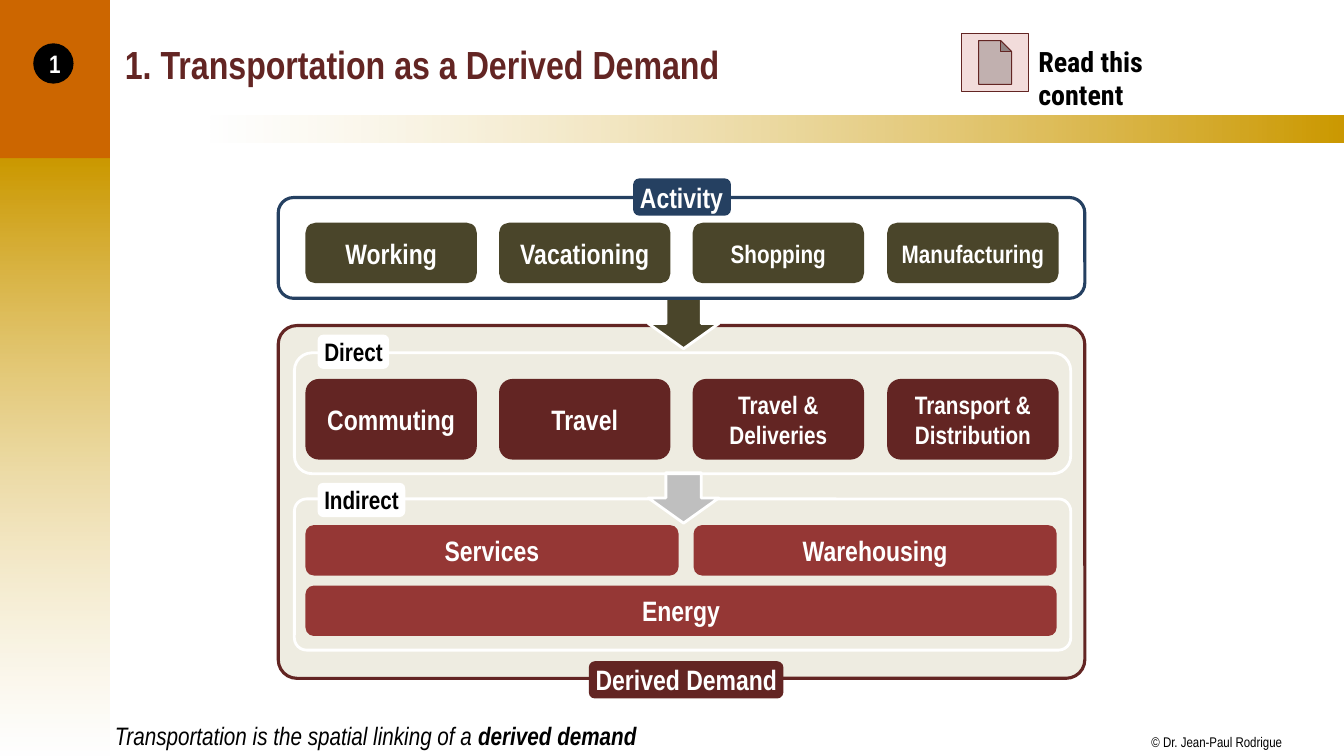
from lxml.etree import SubElement
from pptx import Presentation
from pptx.dml.color import RGBColor
from pptx.enum.shapes import MSO_SHAPE
from pptx.enum.text import MSO_ANCHOR, PP_ALIGN
from pptx.oxml.ns import qn
from pptx.util import Pt

PX = 9144  # 100 px to the inch
THEME = {
    "font": "Arial Narrow", "link_font": "Roboto Condensed",
    "title": 28, "large": 20, "medium": 18, "small": 10,
    "white": "FFFFFF", "black": "000000", "gold": "CC9900", "orange": "CC6600",
    "maroon": "632523", "red": "953735", "olive": "4A452A", "navy": "254061",
    "cream": "EEECE1", "pink": "F2DCDB", "gray": "BFBFBF",
}


def color(name):
    return RGBColor.from_string(THEME[name])


def add_box(kind, x, y, w, h, fill=None, line=None, weight=2, adj=None):
    sp = s.shapes.add_shape(kind, x * PX, y * PX, w * PX, h * PX)
    sp.shadow.inherit = False
    if fill:
        sp.fill.solid()
        sp.fill.fore_color.rgb = color(fill)
    else:
        sp.fill.background()
    if line:
        sp.line.color.rgb = color(line)
        sp.line.width = Pt(weight)
    else:
        sp.line.fill.background()
    if adj is not None:
        sp.adjustments[0] = adj
    return sp


# Two helpers are enough: one draws a shape, one fills it with text
def set_text(sp, runs, size, ink="white", font="font", align=PP_ALIGN.LEFT,
             anchor=MSO_ANCHOR.TOP, wrap=True, inset=(10, 5), bold=True):
    """Fill a shape with one paragraph made of the given runs."""
    tf = sp.text_frame
    tf.word_wrap = wrap
    tf.vertical_anchor = anchor
    tf.margin_left = tf.margin_right = inset[0] * PX
    tf.margin_top = tf.margin_bottom = inset[1] * PX
    p = tf.paragraphs[0]
    p.alignment = align
    p.font.name = THEME[font]
    p.font.size = Pt(THEME[size])
    p.font.bold = bold
    p.font.color.rgb = color(ink)
    for text in runs:
        p.add_run().text = text
    return p


prs = Presentation()
prs.slide_width, prs.slide_height = 1333 * PX, 750 * PX
s = prs.slides.add_slide(prs.slide_layouts[6])
ROUND = MSO_SHAPE.ROUNDED_RECTANGLE
CENTERED = {"align": PP_ALIGN.CENTER, "anchor": MSO_ANCHOR.MIDDLE}

# Side and top bands
bands = [
    ((-2, 157, 111, 593), 270, ("gold", "white")),
    ((209, 115, 1125, 26), 0, ("white", "gold")),
]
for place, angle, names in bands:
    fill = add_box(MSO_SHAPE.RECTANGLE, *place).fill
    fill.gradient()
    fill.gradient_angle = angle
    for stop, name, position in zip(fill.gradient_stops, names, (0, 1)):
        stop.color.rgb = color(name)
        stop.position = position
    for rgb in fill._xPr.iter(qn("a:srgbClr")):
        if rgb.get("val") == THEME["white"]:
            SubElement(rgb, qn("a:alpha"), val="50000")
add_box(MSO_SHAPE.RECTANGLE, -2, -1, 111, 158, "orange")

# Heading
number = add_box(MSO_SHAPE.OVAL, 33, 43, 40, 40, "black")
set_text(number, ["1"], "medium", **CENTERED)
title = s.shapes.add_textbox(114 * PX, 11 * PX, 1197 * PX, 104 * PX)
set_text(title, ["1. Transportation as a Derived Demand"], "title", "maroon",
         anchor=MSO_ANCHOR.MIDDLE)
add_box(MSO_SHAPE.ACTION_BUTTON_DOCUMENT, 954, 33, 66, 58, "pink", "maroon", 0.75)
link = s.shapes.add_textbox(1020 * PX, 39 * PX, 186 * PX, 44 * PX)
set_text(link, ["Read this content"], "large", "black", "link_font")

# Frames and the arrows that join them
add_box(ROUND, 276, 323, 800, 350, "cream", "maroon", 2.25, 0.053)
add_box(ROUND, 292, 495, 770, 150, line="white", adj=0.081)
for y, fill in [(469, "gray"), (296, "olive")]:
    add_box(MSO_SHAPE.DOWN_ARROW, 643, y, 70, 50, fill, "white")
add_box(ROUND, 276, 196, 800, 100, line="navy", weight=2.25, adj=0.152)
add_box(ROUND, 292, 350, 770, 120, line="white", adj=0.147)

# Four activities above the four direct demands they cause
columns = [303 + i * 577 // 3 for i in range(4)]
column_sizes = ["large", "large", "medium", "medium"]
rows = [
    (221, 60, "olive", ["Working", "Vacationing", "Shopping", "Manufacturing"]),
    (376, 80, "maroon", ["Commuting", "Travel", "Travel & Deliveries",
                         "Transport & Distribution"]),
]
for y, h, fill, labels in rows:
    for x, size, label in zip(columns, column_sizes, labels):
        set_text(add_box(ROUND, x, y, 170, h, fill), [label], size, **CENTERED)

# Indirect demands
for label, x, y, w in [("Services", 303, 521, 370), ("Warehousing", 688, 521, 360),
                       ("Energy", 303, 581, 745)]:
    set_text(add_box(ROUND, x, y, w, 50, "red"), [label], "large", **CENTERED)

# Frame tags, each on a single line
tags = [
    ("Activity", (628, 177, 97, 37), "navy", "large", "white"),
    ("Direct", (315, 332, 71, 34), "white", "medium", "black"),
    ("Indirect", (315, 479, 87, 34), "white", "medium", "black"),
    ("Derived Demand", (584, 656, 193, 37), "maroon", "large", "white"),
]
for label, place, fill, size, ink in tags:
    set_text(add_box(ROUND, *place, fill), [label], size, ink, wrap=False, inset=(5, 0))

# Closing statement and copyright
closing = s.shapes.add_textbox(104 * PX, 710 * PX, 561 * PX, 40 * PX)
p = set_text(closing, ["Transportation is the spatial linking of a ", "derived demand"],
             "medium", "black", wrap=False, bold=False)
p.font.italic = True
p.runs[1].font.bold = True
credit = s.shapes.add_textbox(1142 * PX, 728 * PX, 131 * PX, 17 * PX)
set_text(credit, ["© Dr. Jean-Paul Rodrigue"], "small", "black", wrap=False,
         inset=(0, 0), bold=False)

prs.save("out.pptx")
